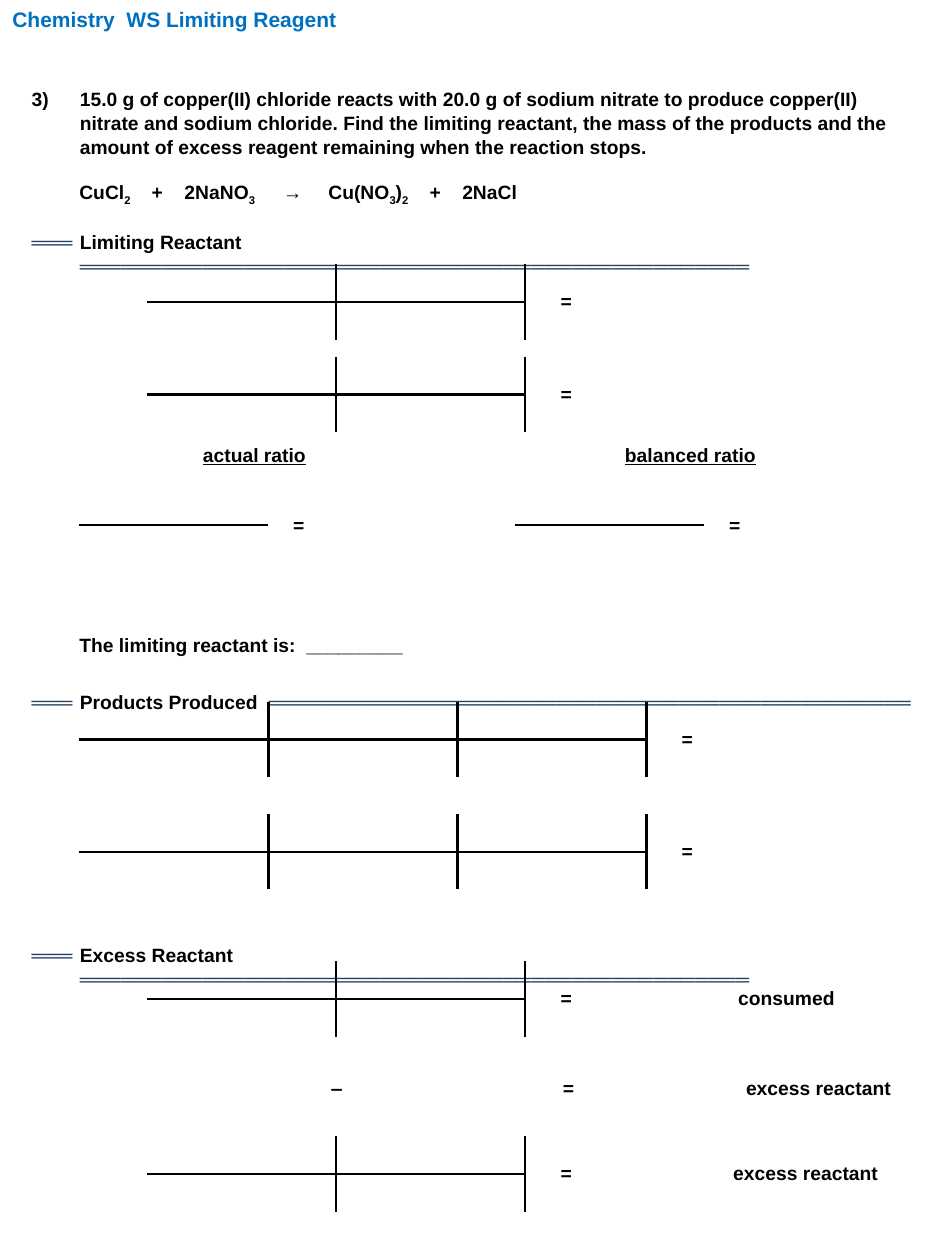
from dataclasses import dataclass

from lxml.etree import SubElement
from pptx import Presentation
from pptx.dml.color import RGBColor
from pptx.enum.text import MSO_ANCHOR, PP_ALIGN
from pptx.oxml.ns import qn
from pptx.util import Cm, Pt

COLORS = {"ink": "000000", "rule": "254061", "title": "0070C0"}
PLAIN_STYLE = "{2D5ABB26-0587-4C30-8999-92F81FD0307C}"
MARGIN, BODY, INDENT = 0.64, 1.6, 0.97
SLOT, ROW, TALL_ROW = 3.81, 0.76, 1.02


@dataclass(frozen=True)
class Span:
    text: str
    subscript: bool = False
    rule: bool = False


@dataclass(frozen=True)
class Line:
    left: float
    top: float
    width: float
    spans: tuple[Span, ...]
    hanging: bool = False
    tabs: tuple[float, ...] = ()
    size: float = 11
    color: str = "ink"
    spacing: float = 1.04


@dataclass(frozen=True)
class Grid:
    left: float
    top: float
    slots: int
    equals_width: float = 1.65
    answer_width: float = SLOT
    row_height: float = ROW
    heading: str = ""
    answer: str = ""
    answer_margin: float = 0.25


def section(top: float, name: str, length: int) -> Line:
    """Return a section heading set between two double rules."""
    spans = (Span("═" * 3, rule=True), Span(f"\t{name} "), Span("═" * length, rule=True))
    return Line(MARGIN, top, 17.78, spans, hanging=True)


QUESTION = (
    "3)\t15.0 g of copper(II) chloride reacts with 20.0 g of sodium nitrate to produce "
    "copper(II) nitrate and sodium chloride. Find the limiting reactant, the mass of the "
    "products and the amount of excess reagent remaining when the reaction stops."
)
EQUATION = (
    Span("CuCl"), Span("2", subscript=True), Span("\t+\t2NaNO"), Span("3", subscript=True),
    Span("\t→\tCu(NO"), Span("3", subscript=True), Span(")"), Span("2", subscript=True),
    Span("\t+\t2NaCl"),
)
LINES = [
    Line(0.25, 0.13, 14, (Span("Chemistry  WS Limiting Reagent"),),
         size=12, color="title", spacing=1),
    Line(MARGIN, 1.75, 17.78, (Span(QUESTION),), hanging=True),
    Line(BODY, 3.61, 16, EQUATION, tabs=(1.46, 2.12, 4.11, 5.02, 7.06, 7.72)),
    section(4.62, "Limiting Reactant", 49),
    Line(BODY, 12.75, 16, (Span("The limiting reactant is:  _________"),)),
    section(13.89, "Products Produced ", 47),
    section(19, "Excess Reactant ", 49),
    Line(6.68, 21.67, 12, (Span("‒\t=\texcess reactant"),), tabs=(4.67, 8.36)),
]
GRIDS = [
    *(Grid(2.97, top, 2) for top in (5.33, 7.19)),
    *(Grid(left, 8.81, 1, 1.22, 2.03, TALL_ROW, heading)
      for left, heading in ((BODY, "actual ratio"), (10.39, "balanced ratio"))),
    *(Grid(BODY, top, 3) for top in (14.15, 16.41)),
    Grid(2.97, 19.38, 2, answer_width=6.35, answer="consumed", answer_margin=2.64),
    Grid(2.97, 22.91, 2, answer_width=6.35, answer="excess reactant", answer_margin=2.54),
]


def set_font(font, size: float = 11, color: str = "ink") -> None:
    """Apply the worksheet's bold face."""
    font.name, font.size, font.bold = "Arial", Pt(size), True
    font.color.rgb = RGBColor.from_string(COLORS[color])


def draw_line(page, line: Line) -> None:
    """Draw one paragraph in its own text box."""
    box = page.shapes.add_textbox(Cm(line.left), Cm(line.top), Cm(line.width), Cm(0.6))
    frame = box.text_frame
    frame.word_wrap = True
    frame.margin_left = frame.margin_right = frame.margin_top = frame.margin_bottom = 0
    para = frame.paragraphs[0]
    para.line_spacing = line.spacing
    set_font(para.font, line.size, line.color)
    properties = para._p.get_or_add_pPr()
    if line.hanging:
        properties.set("marL", str(Cm(INDENT)))
        properties.set("indent", str(-Cm(INDENT)))
    if line.tabs:
        stops = SubElement(properties, qn("a:tabLst"))
        properties.find(qn("a:defRPr")).addprevious(stops)
        for position in line.tabs:
            SubElement(stops, qn("a:tab"), pos=str(Cm(position)), algn="l")
    for span in line.spans:
        run = para.add_run()
        run.text = span.text
        if span.subscript:
            run._r.get_or_add_rPr().set("baseline", "-25000")
        if span.rule:
            run.font.bold = False
            run.font.color.rgb = RGBColor.from_string(COLORS["rule"])


def set_borders(cell, sides: str) -> None:
    """Give the cell a solid border on each named side, in L, R, T, B order."""
    properties = cell._tc.get_or_add_tcPr()
    for position, side in enumerate(sides):
        border = SubElement(properties, qn(f"a:ln{side}"), w=str(Pt(1.5)))
        fill = SubElement(border, qn("a:solidFill"))
        SubElement(fill, qn("a:srgbClr"), val=COLORS["ink"])
        properties.insert(position, border)


def write_cell(cell, text: str, align=PP_ALIGN.CENTER, underline: bool = False) -> None:
    """Write one line of text in the middle of a cell."""
    cell.vertical_anchor = MSO_ANCHOR.MIDDLE
    para = cell.text_frame.paragraphs[0]
    para.alignment = align
    para.add_run().text = text
    para.font.underline = underline


def draw_grid(page, grid: Grid) -> None:
    """Draw conversion slots followed by an equals sign and an answer."""
    widths = [SLOT] * grid.slots + [grid.equals_width, grid.answer_width]
    heights = [ROW] * bool(grid.heading) + [grid.row_height] * 2
    table = page.shapes.add_table(
        len(heights), len(widths), Cm(grid.left), Cm(grid.top),
        Cm(sum(widths)), Cm(sum(heights))).table
    table.first_row = table.horz_banding = False
    table._tbl.tblPr.find(qn("a:tableStyleId")).text = PLAIN_STYLE
    for column, width in zip(table.columns, widths):
        column.width = Cm(width)
    for row, height in zip(table.rows, heights):
        row.height = Cm(height)
    for cell in table.iter_cells():
        cell.fill.background()
        cell.margin_top = cell.margin_bottom = 0
        set_font(cell.text_frame.paragraphs[0].font)
    upper = len(heights) - 2
    if grid.heading:
        table.cell(0, 0).merge(table.cell(0, len(widths) - 1))
        write_cell(table.cell(0, 0), grid.heading, underline=True)
    for slot in range(grid.slots):
        sides = "L" * (slot > 0) + "R" * (slot < grid.slots - 1)
        set_borders(table.cell(upper, slot), sides + "B")
        set_borders(table.cell(upper + 1, slot), sides + "T")
    for column in (grid.slots, grid.slots + 1):
        table.cell(upper, column).merge(table.cell(upper + 1, column))
    write_cell(table.cell(upper, grid.slots), "=")
    if grid.answer:
        answer = table.cell(upper, grid.slots + 1)
        answer.margin_left = Cm(grid.answer_margin)
        write_cell(answer, grid.answer, PP_ALIGN.LEFT)


def main() -> None:
    """Build the limiting reagent worksheet."""
    deck = Presentation()
    deck.slide_width, deck.slide_height = Cm(19.05), Cm(25.4)
    page = deck.slides.add_slide(deck.slide_layouts[6])
    for line in LINES:
        draw_line(page, line)
    for grid in GRIDS:
        draw_grid(page, grid)
    deck.save("out.pptx")


if __name__ == "__main__":
    main()
